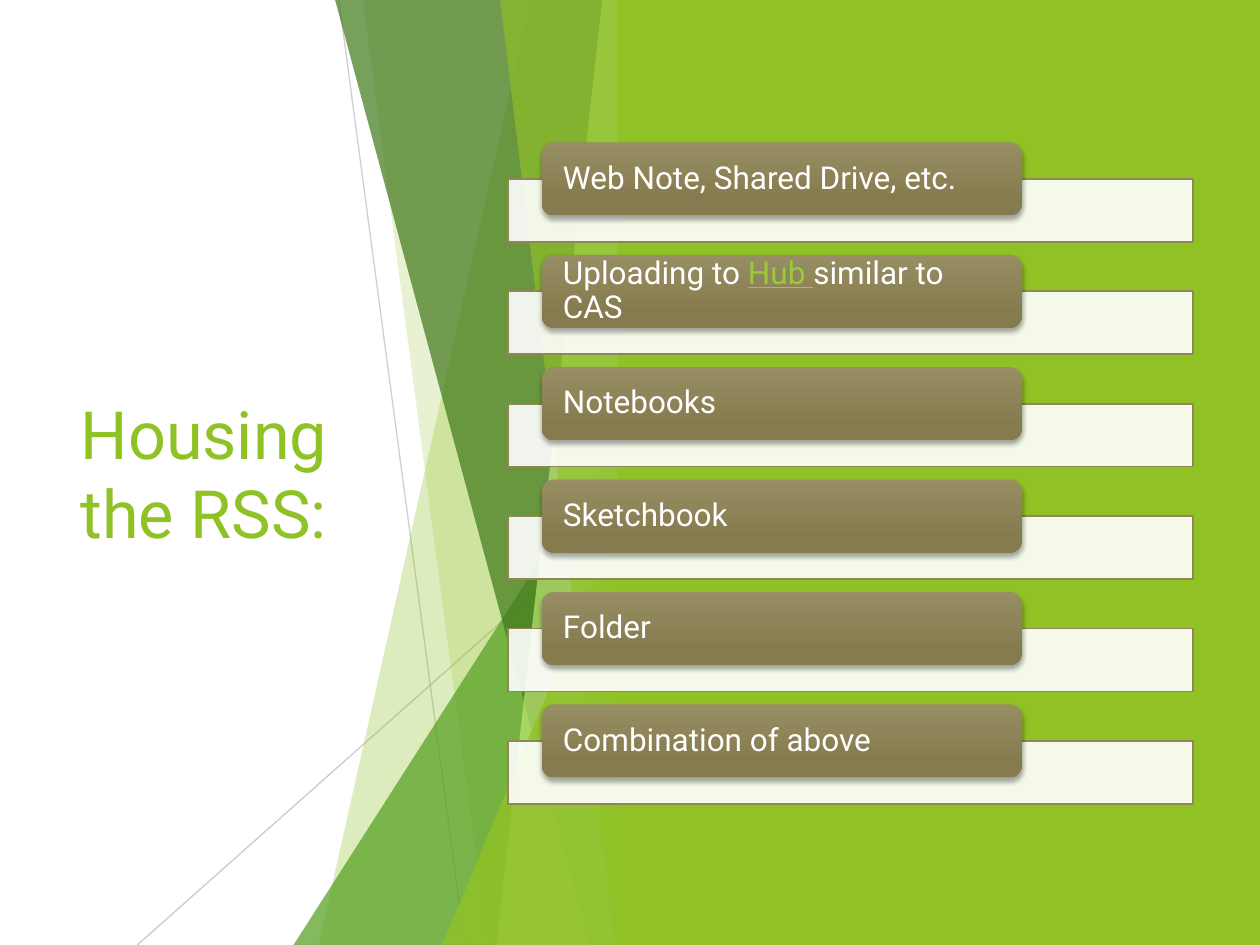
from dataclasses import dataclass

from lxml.etree import SubElement
from pptx import Presentation
from pptx.dml.color import RGBColor
from pptx.enum.shapes import MSO_CONNECTOR, MSO_SHAPE
from pptx.enum.text import MSO_ANCHOR, PP_ALIGN
from pptx.oxml.ns import qn
from pptx.util import Inches, Pt

FONT = "Roboto"
WHITE = RGBColor(0xFF, 0xFF, 0xFF)
BLACK = RGBColor(0x00, 0x00, 0x00)
GREEN = RGBColor(0x90, 0xC2, 0x26)
MID_GREEN = RGBColor(0x54, 0xA0, 0x21)
DARK_GREEN = RGBColor(0x3F, 0x78, 0x19)
PALE_GREEN = RGBColor(0xC0, 0xE4, 0x74)
LINK_GREEN = RGBColor(0x99, 0xCA, 0x3C)
GRAY = RGBColor(0xBF, 0xBF, 0xBF)
BROWN_LINE = RGBColor(0x91, 0x86, 0x55)
BROWN_TOP = RGBColor(0x98, 0x8E, 0x64)
BROWN_BOTTOM = RGBColor(0x85, 0x7B, 0x4E)

SLIDE_HEIGHT = 7.5
FACET_RIGHT = 5
FIRST_TOP, LAST_TOP = 1.13, 5.59
BAR_OFFSET = 0.29


@dataclass(frozen=True)
class Facet:
    """A band running to the right edge; its slanted left side goes from top_x to bottom_x."""
    top_x: float
    bottom_x: float
    color: RGBColor
    opacity: int


@dataclass(frozen=True)
class Corner:
    """A right triangle standing in the bottom right corner of the facets."""
    left: float
    top: float
    color: RGBColor
    opacity: int


@dataclass(frozen=True)
class Hairline:
    start: tuple[float, float]
    end: tuple[float, float]
    opacity: int


@dataclass(frozen=True)
class TextRun:
    text: str
    is_link: bool = False


HAIRLINES = [
    Hairline((2.69, 0), (3.69, SLIDE_HEIGHT), 75),
    Hairline((5, 4.03), (1.09, SLIDE_HEIGHT), 80),
]
FACETS = [
    Facet(4.21, 2.53, GREEN, 30),
    Facet(2.88, 3.87, GREEN, 20),
    Corner(2.33, 3.33, MID_GREEN, 72),
    Facet(2.66, 4.68, DARK_GREEN, 70),
    Facet(4.78, 3.94, PALE_GREEN, 70),
    Facet(3.97, 4.88, GREEN, 65),
    Corner(3.51, 3.93, GREEN, 80),
]
OPTIONS = [
    [TextRun("Web Note, Shared Drive, etc.")],
    [TextRun("Uploading to "), TextRun("Hub ", is_link=True), TextRun("similar to CAS")],
    [TextRun("Notebooks")],
    [TextRun("Sketchbook")],
    [TextRun("Folder")],
    [TextRun("Combination of above")],
]


def set_opacity(shape, percent: int) -> None:
    """Apply the opacity to the first solid colour of the shape or line."""
    color = next(shape._element.spPr.iter(qn("a:srgbClr")))
    SubElement(color, qn("a:alpha"), val=str(percent * 1000))


def fill_plain(shape, color: RGBColor, opacity: int = 100) -> None:
    shape.shadow.inherit = False
    shape.fill.solid()
    shape.fill.fore_color.rgb = color
    shape.line.fill.background()
    if opacity < 100:
        set_opacity(shape, opacity)


def add_box(slide, kind: MSO_SHAPE, left: float, top: float, width: float, height: float):
    return slide.shapes.add_shape(
        kind, Inches(left), Inches(top), Inches(width), Inches(height))


def add_hairline(slide, hairline: Hairline) -> None:
    connector = slide.shapes.add_connector(
        MSO_CONNECTOR.STRAIGHT,
        *(Inches(value) for value in hairline.start + hairline.end))
    connector.line.color.rgb = GRAY
    connector.line.width = Pt(0.75)
    set_opacity(connector, hairline.opacity)
    SubElement(connector._element.spPr, qn("a:effectLst"))


def add_facet(slide, facet: Facet) -> None:
    right, bottom = Inches(FACET_RIGHT), Inches(SLIDE_HEIGHT)
    builder = slide.shapes.build_freeform(Inches(facet.top_x), 0)
    builder.add_line_segments(
        [(right, 0), (right, bottom), (Inches(facet.bottom_x), bottom)], close=True)
    fill_plain(builder.convert_to_shape(), facet.color, facet.opacity)


def add_corner(slide, corner: Corner) -> None:
    shape = add_box(slide, MSO_SHAPE.ISOSCELES_TRIANGLE, corner.left, corner.top,
                    FACET_RIGHT - corner.left, SLIDE_HEIGHT - corner.top)
    shape.adjustments[0] = 1
    fill_plain(shape, corner.color, corner.opacity)


def add_soft_shadow(shape) -> None:
    shape.shadow.inherit = False
    effects = shape._element.spPr.find(qn("a:effectLst"))
    shadow = SubElement(effects, qn("a:outerShdw"), blurRad=str(Pt(3)), dist=str(Pt(2)),
                        dir="5400000", rotWithShape="0")
    color = SubElement(shadow, qn("a:srgbClr"), val=str(BLACK))
    SubElement(color, qn("a:alpha"), val="35000")


def add_run(paragraph, text: str, size: float, color: RGBColor):
    run = paragraph.add_run()
    run.text = text
    run.font.name = FONT
    run.font.size = Pt(size)
    run.font.color.rgb = color
    return run


def add_option(slide, top: float, runs: list[TextRun]) -> None:
    bar = add_box(slide, MSO_SHAPE.RECTANGLE, 4.03, top + BAR_OFFSET, 5.44, 0.5)
    fill_plain(bar, WHITE, 90)
    bar.line.color.rgb = BROWN_LINE
    bar.line.width = Pt(1)

    label = add_box(slide, MSO_SHAPE.ROUNDED_RECTANGLE, 4.3, top, 3.81, 0.58)
    label.line.fill.background()
    label.fill.gradient()
    label.fill.gradient_angle = 270
    stops = [(0, BROWN_TOP), (0.78, BROWN_BOTTOM)]
    for stop, (position, color) in zip(label.fill.gradient_stops, stops):
        stop.position = position
        stop.color.rgb = color
    add_soft_shadow(label)

    frame = label.text_frame
    frame.word_wrap = True
    frame.vertical_anchor = MSO_ANCHOR.MIDDLE
    frame.margin_left = frame.margin_right = Inches(0.14)
    frame.margin_top = frame.margin_bottom = 0
    paragraph = frame.paragraphs[0]
    paragraph.alignment = PP_ALIGN.LEFT
    paragraph.line_spacing = 0.9
    for item in runs:
        run = add_run(paragraph, item.text, 18, LINK_GREEN if item.is_link else WHITE)
        if item.is_link:
            run.font.underline = True


def add_title(slide, text: str) -> None:
    title = slide.shapes.title
    title.left, title.top = Inches(0.54), Inches(1.51)
    title.width, title.height = Inches(2.91), Inches(4.48)
    title.text_frame.word_wrap = True
    title.text_frame.vertical_anchor = MSO_ANCHOR.MIDDLE
    paragraph = title.text_frame.paragraphs[0]
    paragraph.alignment = PP_ALIGN.LEFT
    add_run(paragraph, text, 38, GREEN)


def main() -> None:
    presentation = Presentation()
    presentation.slide_width = Inches(10)
    presentation.slide_height = Inches(SLIDE_HEIGHT)
    slide = presentation.slides.add_slide(presentation.slide_layouts[5])

    add_title(slide, "Housing the RSS:")
    for hairline in HAIRLINES:
        add_hairline(slide, hairline)
    for facet in FACETS:
        if isinstance(facet, Corner):
            add_corner(slide, facet)
        else:
            add_facet(slide, facet)
    fill_plain(add_box(slide, MSO_SHAPE.RECTANGLE, 4.9, 0, 5.1, SLIDE_HEIGHT), GREEN)

    pitch = (LAST_TOP - FIRST_TOP) / (len(OPTIONS) - 1)
    for index, runs in enumerate(OPTIONS):
        add_option(slide, FIRST_TOP + index * pitch, runs)

    presentation.save("out.pptx")


if __name__ == "__main__":
    main()
